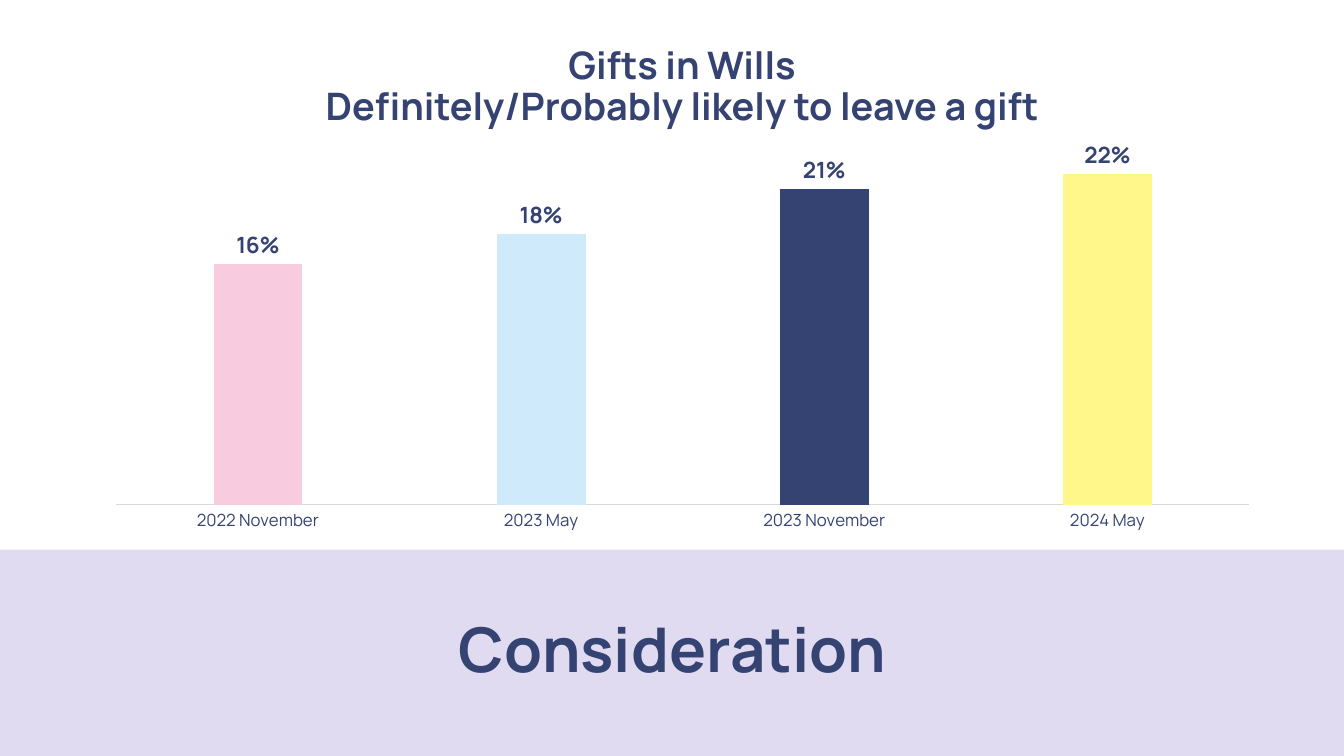
from lxml.etree import SubElement
from pptx import Presentation
from pptx.chart.data import CategoryChartData
from pptx.dml.color import RGBColor
from pptx.enum.chart import XL_CHART_TYPE, XL_LABEL_POSITION, XL_TICK_MARK
from pptx.enum.shapes import MSO_SHAPE
from pptx.enum.text import MSO_ANCHOR, PP_ALIGN
from pptx.oxml import parse_xml
from pptx.oxml.ns import nsdecls, qn
from pptx.util import Inches, Pt

WIDTH, HEIGHT = Inches(13.33), Inches(7.5)
NAVY, LILAC, GREY = "354373", "C5B8E5", "D9D9D9"
GIFTS = {
    "2022 November": (0.16, "F8CBDF"),
    "2023 May": (0.18, "CEEAFB"),
    "2023 November": (0.21, NAVY),
    "2024 May": (0.22, "FFF78A"),
}


def color(target, value):
    """Apply a hex colour to a fill or a font."""
    if hasattr(target, "solid"):
        target.solid()
        target.fore_color.rgb = RGBColor.from_string(value)
    else:
        target.color.rgb = RGBColor.from_string(value)


def style(font, size, bold=False):
    """Set the navy Manrope face on a font."""
    for name, value in {"name": "Manrope", "size": Pt(size), "bold": bold}.items():
        setattr(font, name, value)
    color(font, NAVY)


def box(x, y, w, h):
    """Turn shares of the slide into a left, top, width, height tuple."""
    return int(x * WIDTH), int(y * HEIGHT), int(w * WIDTH), int(h * HEIGHT)


def add_band(s, area, fill, alpha):
    """Add a translucent rectangle without outline."""
    sp = s.shapes.add_shape(MSO_SHAPE.RECTANGLE, *area)
    sp.shadow.inherit = False
    sp.line.fill.background()
    color(sp.fill, fill)
    tint = sp.fill._xPr.find(".//" + qn("a:srgbClr"))
    SubElement(tint, qn("a:alpha")).set("val", str(alpha * 1000))


def add_heading(s, area, text, size, anchor):
    """Add a centred bold heading."""
    tf = s.shapes.add_textbox(*area).text_frame
    tf.word_wrap = True
    tf.vertical_anchor = anchor
    p = tf.paragraphs[0]
    p.text = text
    for name, value in {"alignment": PP_ALIGN.CENTER, "line_spacing": 0.9}.items():
        setattr(p, name, value)
    for r in p.runs:
        style(r.font, size, bold=True)


def set_plot_area(chart, **shares):
    """Fix the inner plot area as shares of the chart."""
    marks = "".join(f'<c:{k}Mode val="edge"/>' for k in "xy")
    marks += "".join(f'<c:{k} val="{v}"/>' for k, v in shares.items())
    plot_area = chart._chartSpace.chart.plotArea
    for layout in plot_area.findall(qn("c:layout")):
        plot_area.remove(layout)
    plot_area.insert(0, parse_xml(
        f'<c:layout {nsdecls("c")}><c:manualLayout>'
        f'<c:layoutTarget val="inner"/>{marks}</c:manualLayout></c:layout>'))


def add_columns(s, area, gifts):
    """Add a column chart with one colour for each survey wave."""
    data = CategoryChartData(number_format="0%")
    data.categories = list(gifts)
    data.add_series("Series 1", [share for share, _ in gifts.values()])
    chart = s.shapes.add_chart(XL_CHART_TYPE.COLUMN_CLUSTERED, *area, data).chart
    style(chart.font, 10)
    chart.has_legend = chart.has_title = False
    set_plot_area(chart, x=0.02, y=0.02, w=0.96, h=0.9)

    axis = chart.value_axis
    for name, value in {"minimum_scale": 0, "maximum_scale": 0.25,
                        "has_major_gridlines": False, "visible": False}.items():
        setattr(axis, name, value)
    axis = chart.category_axis
    axis.major_tick_mark = XL_TICK_MARK.NONE
    style(axis.tick_labels.font, 12)
    color(axis.format.line.fill, GREY)
    axis.format.line.width = Pt(0.75)

    plot = chart.plots[0]
    for name, value in {"gap_width": 219, "overlap": -27,
                        "vary_by_categories": False, "has_data_labels": True}.items():
        setattr(plot, name, value)
    for name, value in {"show_value": True, "number_format": "0%",
                        "number_format_is_linked": False,
                        "position": XL_LABEL_POSITION.OUTSIDE_END}.items():
        setattr(plot.data_labels, name, value)
    style(plot.data_labels.font, 16, bold=True)
    for i, (_, fill) in enumerate(gifts.values()):
        color(plot.series[0].points[i].format.fill, fill)


def main():
    """Build the slide and save it."""
    prs = Presentation()
    prs.slide_width, prs.slide_height = WIDTH, HEIGHT
    s = prs.slides.add_slide(prs.slide_layouts[6])
    add_band(s, box(0, 0.727, 1, 0.273), LILAC, 50)
    add_heading(s, box(0.19, 0.056, 0.635, 0.116),
                "Gifts in Wills\nDefinitely/Probably likely to leave a gift",
                27, MSO_ANCHOR.TOP)
    add_columns(s, box(0.069, 0.159, 0.878, 0.553), GIFTS)
    add_heading(s, box(0.069, 0.757, 0.863, 0.212), "Consideration",
                44, MSO_ANCHOR.MIDDLE)
    prs.save("out.pptx")


if __name__ == "__main__":
    main()
